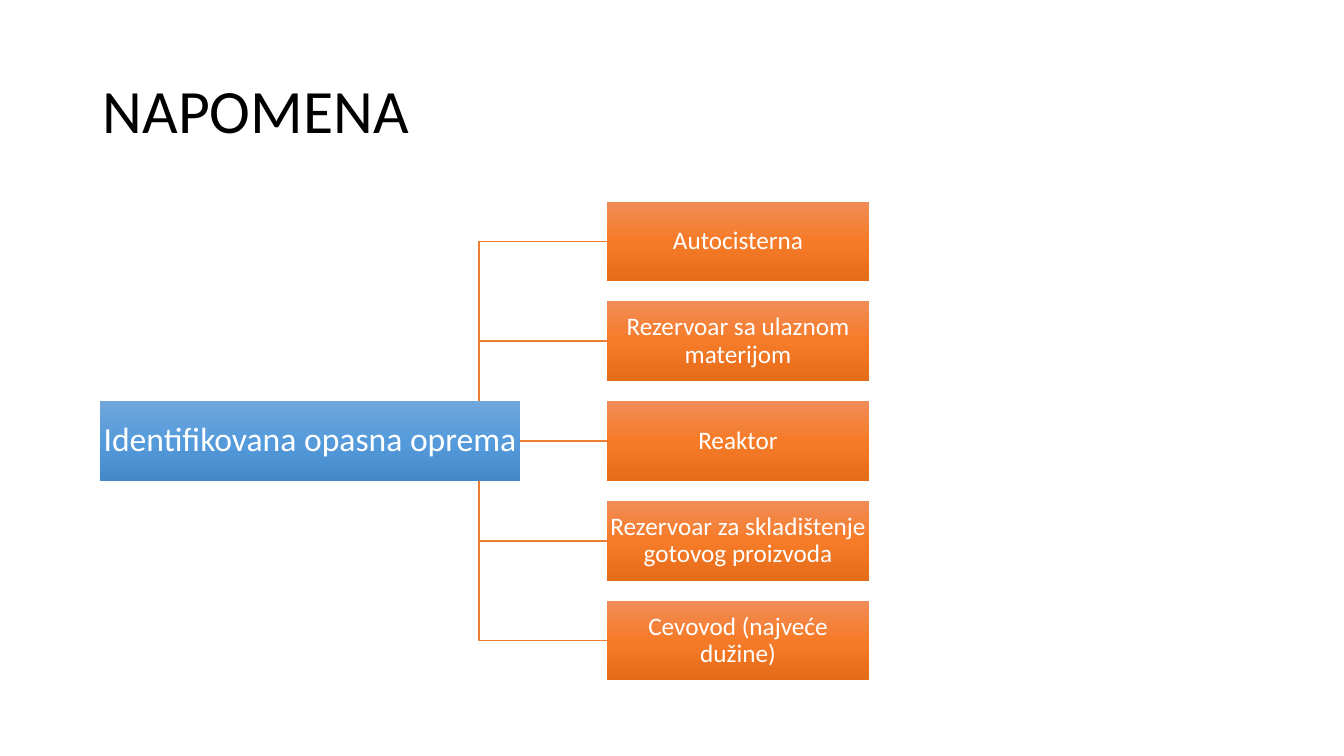
from copy import deepcopy

from pptx import Presentation
from pptx.dml.color import RGBColor
from pptx.enum.shapes import MSO_CONNECTOR, MSO_SHAPE
from pptx.enum.text import MSO_ANCHOR, MSO_AUTO_SIZE, PP_ALIGN
from pptx.oxml.ns import qn
from pptx.util import Inches, Pt
from lxml import etree

RECTANGLE = MSO_SHAPE.RECTANGLE
ELBOW, STRAIGHT = MSO_CONNECTOR.ELBOW, MSO_CONNECTOR.STRAIGHT
MIDDLE, NO_FIT = MSO_ANCHOR.MIDDLE, MSO_AUTO_SIZE.NONE
LEFT, CENTER = PP_ALIGN.LEFT, PP_ALIGN.CENTER

COLORS = {
    "title": "000000",
    "label": "FFFFFF",
    "branch": "ED7D31",
    "root": ["71A6DB", "559BDB", "448ACA"],
    "item": ["F18C57", "F67B28", "E56C19"],
}
EQUIPMENT = [
    "Autocisterna",
    "Rezervoar sa ulaznom materijom",
    "Reaktor",
    "Rezervoar za skladištenje gotovog proizvoda",
    "Cevovod (najveće dužine)",
]

ROW_TOP, ROW_STEP, BOX_HEIGHT = 2, 0.99, 0.79
ROOT_LEFT, ROOT_WIDTH = 0.99, 4.17
ROOT_CENTER = 3.48
ITEM_LEFT, ITEM_WIDTH = 6.02, 2.6
ROOT_ROW = len(EQUIPMENT) // 2


def write_text(holder, text, size, color, align):
    frame = holder.text_frame
    frame.text = text
    frame.word_wrap = True
    frame.auto_size = NO_FIT
    frame.vertical_anchor = MIDDLE
    paragraph = frame.paragraphs[0]
    paragraph.alignment = align
    paragraph.line_spacing = 0.9
    paragraph.font.name = "Calibri"
    paragraph.font.size = Pt(size)
    paragraph.font.color.rgb = RGBColor.from_string(COLORS[color])


def add_box(row, left, width, text, size, inset, palette):
    box = slide.shapes.add_shape(
        RECTANGLE, Inches(left), Inches(ROW_TOP + row * ROW_STEP), Inches(width), Inches(BOX_HEIGHT)
    )
    box.shadow.inherit = False
    box.line.fill.background()
    box.fill.gradient()
    box.fill.gradient_angle = 270
    stop_list = box.fill._fill._gradFill.find(qn("a:gsLst"))
    stop_list.insert(1, deepcopy(stop_list[0]))
    for stop, position, color in zip(box.fill.gradient_stops, (0, 0.5, 1), COLORS[palette]):
        stop.position = position
        stop.color.rgb = RGBColor.from_string(color)
    for side in ("left", "top", "right", "bottom"):
        setattr(box.text_frame, f"margin_{side}", Inches(inset))
    write_text(box, text, size, "label", CENTER)


deck = Presentation()
deck.slide_width, deck.slide_height = Inches(13.33), Inches(7.5)
slide = deck.slides.add_slide(deck.slide_layouts[5])

title = slide.shapes.title
for side, length in {"left": 0.92, "top": 0.4, "width": 11.5, "height": 1.45}.items():
    setattr(title, side, Inches(length))
write_text(title, "NAPOMENA", 44, "title", LEFT)

row_centers = [ROW_TOP + row * ROW_STEP + BOX_HEIGHT / 2 for row in range(len(EQUIPMENT))]
for row, center in enumerate(row_centers):
    branch = slide.shapes.add_connector(
        STRAIGHT if row == ROOT_ROW else ELBOW,
        Inches(ROOT_CENTER), Inches(row_centers[ROOT_ROW]), Inches(ITEM_LEFT), Inches(center),
    )
    branch.line.color.rgb = RGBColor.from_string(COLORS["branch"])
    branch.line.width = Pt(1)
    etree.SubElement(branch._element.spPr, qn("a:effectLst"))

add_box(ROOT_ROW, ROOT_LEFT, ROOT_WIDTH, "Identifikovana opasna oprema", 24, 0.02, "root")
for row, name in enumerate(EQUIPMENT):
    add_box(row, ITEM_LEFT, ITEM_WIDTH, name, 18, 0.01, "item")

deck.save("out.pptx")
